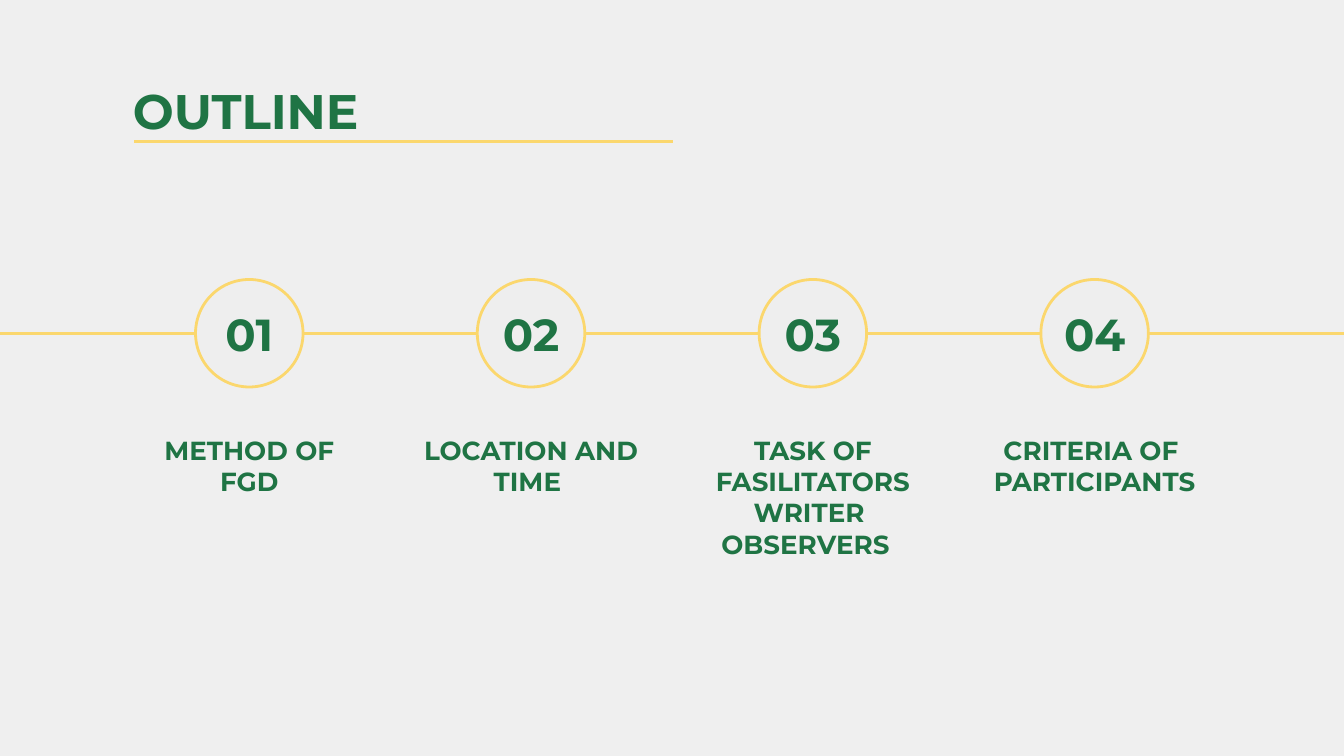
from lxml import etree
from pptx import Presentation
from pptx.dml.color import RGBColor
from pptx.enum import shapes, text
from pptx.oxml.ns import qn
from pptx.util import Inches, Pt

GREEN, YELLOW, PAPER, DISC = "1F7444", "FBD76D", "EFEFEF", "EEEEEE"
FONT = "Montserrat"
SLIDE_WIDTH = 10
SLIDE_HEIGHT = SLIDE_WIDTH * 9 / 16
TOPICS = [
    ["METHOD OF FGD"],
    ["LOCATION AND TIME "],
    ["TASK OF", "FASILITATORS", "WRITER ", "OBSERVERS  "],
    ["CRITERIA OF ", "PARTICIPANTS"],
]


def color(hex_code):
    return RGBColor.from_string(hex_code)


def add_rule(slide, left, right, y):
    rule = slide.shapes.add_connector(
        shapes.MSO_CONNECTOR.STRAIGHT, Inches(left), Inches(y), Inches(right), Inches(y))
    rule.line.color.rgb = color(YELLOW)
    rule.line.width = Pt(1.5)
    etree.SubElement(rule._element.spPr, qn("a:effectLst"))


def add_label(slide, box, lines, size, align=text.PP_ALIGN.CENTER,
              anchor=text.MSO_ANCHOR.TOP):
    frame = slide.shapes.add_textbox(*map(Inches, box)).text_frame
    frame.word_wrap = True
    frame.vertical_anchor = anchor
    frame.margin_left = frame.margin_right = Inches(0.1)
    frame.margin_top = frame.margin_bottom = Inches(0.1)
    paragraph = frame.paragraphs[0]
    paragraph.alignment = align
    for index, line in enumerate(lines):
        if index:
            paragraph.add_line_break()
        run = paragraph.add_run()
        run.text = line
        run.font.name = FONT
        run.font.size = Pt(size)
        run.font.bold = True
        run.font.color.rgb = color(GREEN)


def add_heading(slide, left, top, width, height):
    add_label(slide, (left, top, width, height), ["OUTLINE"], 26, text.PP_ALIGN.LEFT)
    add_rule(slide, left + 0.11, left + 4.12, top + 0.55)


def add_step(slide, left, top, width, number, lines):
    # Numbered circle
    diameter = 0.8
    circle = slide.shapes.add_shape(
        shapes.MSO_SHAPE.OVAL, Inches(left + (width - diameter) / 2), Inches(top),
        Inches(diameter), Inches(diameter))
    circle.shadow.inherit = False
    circle.fill.solid()
    circle.fill.fore_color.rgb = color(DISC)
    circle.line.color.rgb = color(YELLOW)
    circle.line.width = Pt(1.5)
    add_label(slide, (left, top + 0.13, width, 0.55), [f"{number:02}"], 24,
              anchor=text.MSO_ANCHOR.MIDDLE)
    # Topic below the circle
    topic_height = 1.25 if len(lines) > 2 else 0.63
    add_label(slide, (left, top + 1.05, width, topic_height), lines, 14)


def add_timeline(slide, left, top, width, step_width):
    # Line running past both slide edges
    add_rule(slide, -0.02, SLIDE_WIDTH + 0.02, top + 0.4)
    pitch = (width - step_width) / (len(TOPICS) - 1)
    for index, lines in enumerate(TOPICS):
        add_step(slide, left + index * pitch, top, step_width, index + 1, lines)


def main():
    deck = Presentation()
    deck.slide_width, deck.slide_height = Inches(SLIDE_WIDTH), Inches(SLIDE_HEIGHT)
    slide = deck.slides.add_slide(deck.slide_layouts[6])
    slide.background.fill.solid()
    slide.background.fill.fore_color.rgb = color(PAPER)
    add_timeline(slide, 0.93, 2.08, 8.14, 1.85)
    add_heading(slide, 0.89, 0.5, 8.21, 0.63)
    deck.save("out.pptx")


if __name__ == "__main__":
    main()
